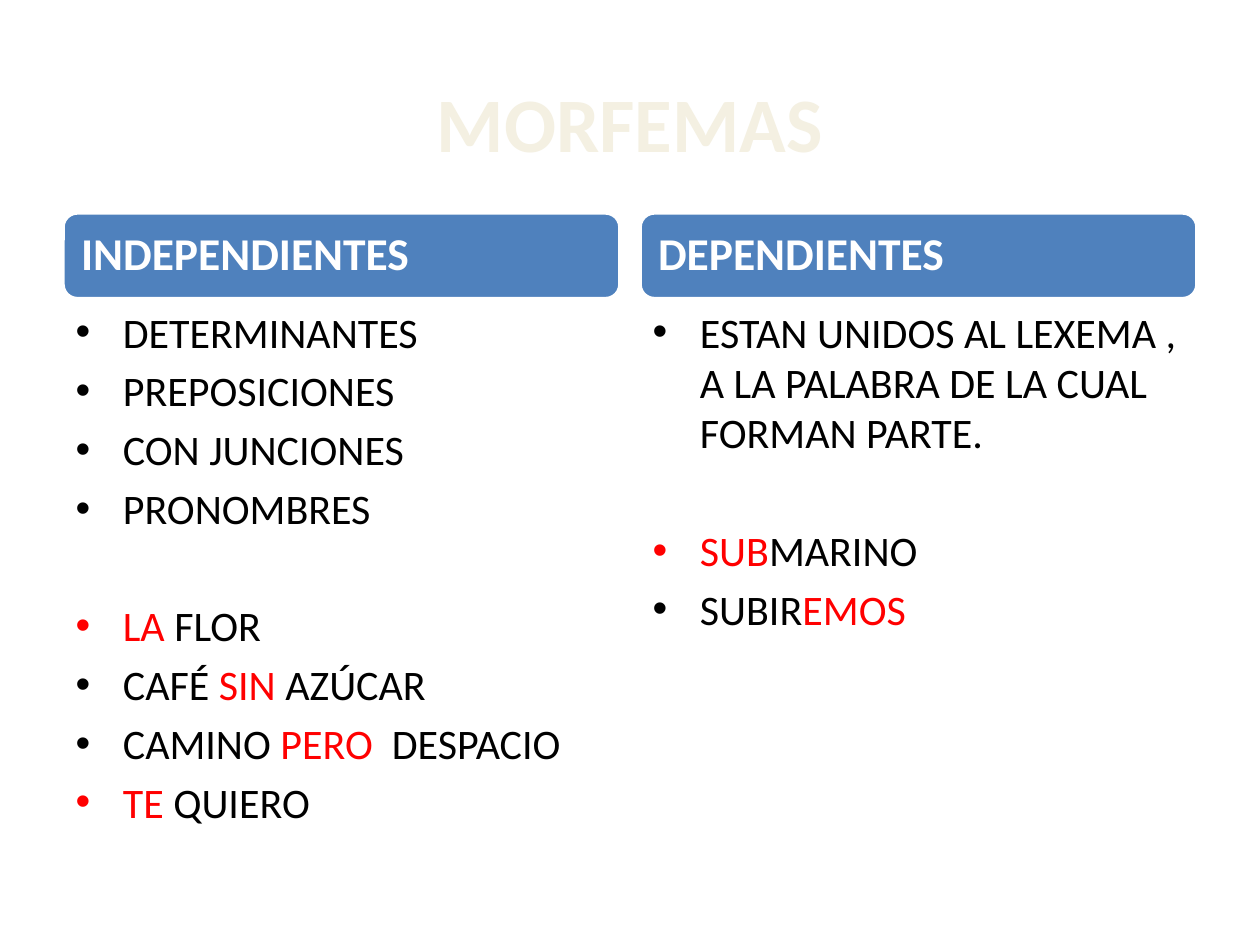
from pptx import Presentation
from pptx import util as u
from pptx.dml.color import RGBColor
from pptx.enum import shapes, text

BLUE = RGBColor(0x4F, 0x81, 0xBD)
WHITE = RGBColor(0xFF, 0xFF, 0xFF)
CREAM = RGBColor(0xF4, 0xF0, 0xE2)
BLACK = RGBColor(0, 0, 0)
RED = RGBColor(0xFF, 0, 0)

COL_WIDTH = 4.42
GROUP_GAP = 38.3  # points before the first example

# Each list is (rules, examples); an example is a list of (wording, colour)
COLUMNS = [
    (0.5, 2, "INDEPENDIENTES",
     ["DETERMINANTES", "PREPOSICIONES", "CON JUNCIONES", "PRONOMBRES"],
     [[("LA ", RED), ("FLOR", BLACK)],
      [("CAFÉ ", BLACK), ("SIN ", RED), ("AZÚCAR", BLACK)],
      [("CAMINO ", BLACK), ("PERO  ", RED), ("DESPACIO", BLACK)],
      [("TE ", RED), ("QUIERO", BLACK)]]),
    (5.08, 4, "DEPENDIENTES",
     ["ESTAN UNIDOS AL LEXEMA , A LA PALABRA DE LA CUAL FORMAN PARTE."],
     [[("SUB", RED), ("MARINO", BLACK)],
      [("SUBIR", BLACK), ("EMOS", RED)]]),
]


class Deck:
    def __init__(self, s, font="Calibri"):
        self.s = s
        self.font = font

    def style(self, p, size, color=None, bold=False):
        p.font.name = self.font
        p.font.size = u.Pt(size)
        p.font.bold = bold
        if color is not None:
            p.font.color.rgb = color

    def place(self, sp, x, y, w, h):
        sp.left, sp.top, sp.width, sp.height = map(u.Inches, (x, y, w, h))

    def title(self, wording):
        sp = self.s.shapes.title
        self.place(sp, 0.5, 0.34, 9, 1.25)
        tf = sp.text_frame
        tf.text = wording
        tf.vertical_anchor = text.MSO_ANCHOR.MIDDLE
        p = tf.paragraphs[0]
        p.alignment = text.PP_ALIGN.CENTER
        self.style(p, 44, CREAM, bold=True)

    def header(self, x, wording):
        sp = self.s.shapes.add_shape(
            shapes.MSO_SHAPE.ROUNDED_RECTANGLE, u.Inches(x), u.Inches(1.69),
            u.Inches(COL_WIDTH), u.Inches(0.68))
        sp.shadow.inherit = False
        sp.fill.solid()
        sp.fill.fore_color.rgb = BLUE
        sp.line.color.rgb = WHITE
        sp.line.width = u.Pt(2)
        tf = sp.text_frame
        tf.word_wrap = True
        tf.vertical_anchor = text.MSO_ANCHOR.MIDDLE
        tf.margin_left = tf.margin_right = u.Inches(0.11)
        tf.margin_top = tf.margin_bottom = u.Inches(0.11)
        p = tf.paragraphs[0]
        p.text = wording
        p.alignment = text.PP_ALIGN.LEFT
        p.line_spacing = 0.9
        self.style(p, 26, WHITE, bold=True)

    def bullets(self, idx, x, rules, examples):
        sp = self.s.placeholders[idx]
        self.place(sp, x, 2.38, COL_WIDTH, 4.32)
        tf = sp.text_frame
        tf.auto_size = text.MSO_AUTO_SIZE.NONE
        items = [[(rule, BLACK)] for rule in rules] + examples
        for i, item in enumerate(items):
            p = tf.add_paragraph() if i else tf.paragraphs[0]
            self.style(p, 24)
            if i == len(rules):
                p.space_before = u.Pt(GROUP_GAP)
            for wording, color in item:
                r = p.add_run()
                r.text = wording
                r.font.color.rgb = color


def main():
    prs = Presentation()
    prs.slide_width, prs.slide_height = u.Inches(10), u.Inches(7.5)
    s = prs.slides.add_slide(prs.slide_layouts[4])
    deck = Deck(s)

    # Title
    deck.title("MORFEMAS")

    # Two columns: header bar over a bulleted list
    for x, idx, heading, rules, examples in COLUMNS:
        deck.header(x, heading)
        deck.bullets(idx, x, rules, examples)

    # The header bars replace the layout's heading placeholders
    for sp in list(s.placeholders):
        if not sp.text_frame.text:
            sp.element.getparent().remove(sp.element)

    prs.save("out.pptx")


if __name__ == "__main__":
    main()
